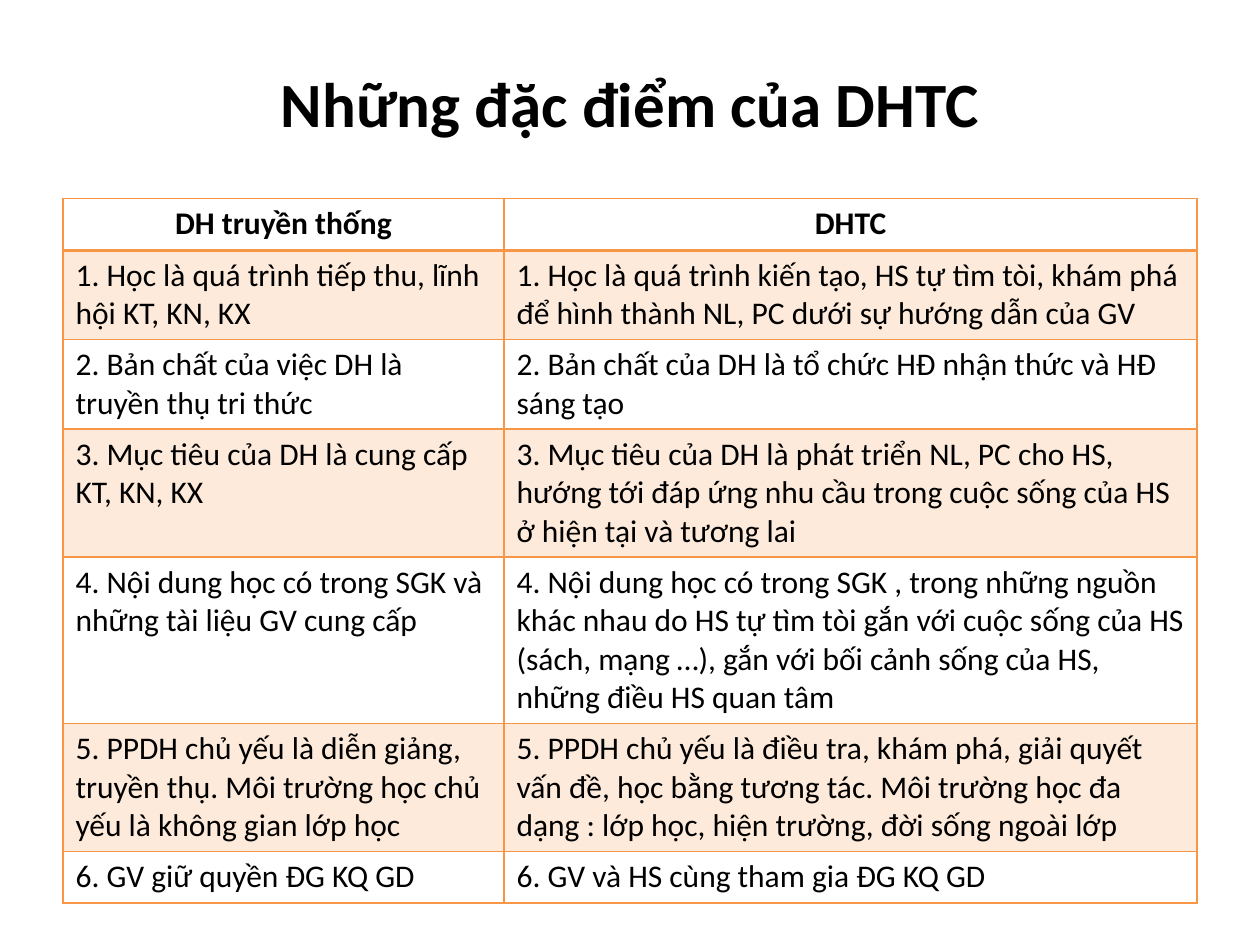
from dataclasses import dataclass

from lxml import etree
from pptx import Presentation
from pptx import util as u
from pptx.dml.color import RGBColor
from pptx.enum import text
from pptx.oxml.ns import qn

HUES = {"ink": "000000", "rule": "F79646"}
FONT = "Calibri"
WIDE, HIGH = u.Inches(10), u.Inches(7.5)
LEFT, SPAN = 0.05, 0.9
COLS = (0.35, 0.55)
ROW = u.Inches(0.41)


@dataclass
class Pair:
    old: str
    new: str
    head: bool = False
    tint: bool = False


PAIRS = [
    Pair("DH truyền thống", "DHTC", head=True),
    Pair("1. Học là quá trình tiếp thu, lĩnh hội KT, KN, KX",
         "1. Học là quá trình kiến tạo, HS tự tìm tòi, khám phá để hình thành NL, "
         "PC dưới sự hướng dẫn của GV", tint=True),
    Pair("2. Bản chất của việc DH là truyền thụ tri thức",
         "2. Bản chất của DH là tổ chức HĐ nhận thức và HĐ sáng tạo"),
    Pair("3. Mục tiêu của DH là cung cấp KT, KN, KX",
         "3. Mục tiêu của DH là phát triển NL, PC cho HS, hướng tới đáp ứng nhu cầu "
         "trong cuộc sống của HS ở hiện tại và tương lai", tint=True),
    Pair("4. Nội dung học có trong SGK và những tài liệu GV cung cấp",
         "4. Nội dung học có trong SGK , trong những nguồn khác nhau do HS tự tìm tòi "
         "gắn với cuộc sống của HS (sách, mạng …), gắn với bối cảnh sống của HS, "
         "những điều HS quan tâm"),
    Pair("5. PPDH chủ yếu là diễn giảng, truyền thụ. Môi trường học chủ yếu là "
         "không gian lớp học",
         "5. PPDH chủ yếu là điều tra, khám phá, giải quyết vấn đề, học bằng tương tác. "
         "Môi trường học đa dạng : lớp học, hiện trường, đời sống ngoài lớp", tint=True),
    Pair("6. GV giữ quyền ĐG KQ GD", "6. GV và HS cùng tham gia ĐG KQ GD"),
]


def style(frame, size: float, bold: bool, mid: bool) -> None:
    for para in frame.paragraphs:
        para.alignment = text.PP_ALIGN.CENTER if mid else text.PP_ALIGN.LEFT
        for run in para.runs:
            run.font.name = FONT
            run.font.size = u.Pt(size)
            run.font.bold = bold
            run.font.color.rgb = RGBColor.from_string(HUES["ink"])


def edge(cell, side: str, width: float) -> None:
    props = cell._tc.get_or_add_tcPr()
    line = etree.SubElement(props, qn(f"a:ln{side}"), w=str(u.Pt(width)))
    fill = etree.SubElement(line, qn("a:solidFill"))
    etree.SubElement(fill, qn("a:srgbClr"), val=HUES["rule"])


def paint(cell, tint: bool) -> None:
    if not tint:
        cell.fill.background()
        return
    cell.fill.solid()
    cell.fill.fore_color.rgb = RGBColor.from_string(HUES["rule"])
    hue = cell._tc.tcPr.find(f"{qn('a:solidFill')}/{qn('a:srgbClr')}")
    etree.SubElement(hue, qn("a:alpha"), val="20000")


def draw_pair(cells, pair: Pair, below: bool) -> None:
    for cell, words in zip(cells, (pair.old, pair.new)):
        cell.text_frame.text = words
        style(cell.text_frame, 18, pair.head, pair.head)
        for side in "LRTB":
            thick = (side == "B" and pair.head) or (side == "T" and below)
            edge(cell, side, 2 if thick else 1)
        paint(cell, pair.tint)


def draw_table(slide) -> None:
    frame = slide.shapes.add_table(
        len(PAIRS), len(COLS), int(WIDE * LEFT), int(HIGH * 0.21),
        int(WIDE * SPAN), ROW * len(PAIRS))
    table = frame.table
    table.horz_banding = False
    for col, share in zip(table.columns, COLS):
        col.width = int(WIDE * share)
    for i, (row, pair) in enumerate(zip(table.rows, PAIRS)):
        row.height = ROW
        draw_pair(row.cells, pair, i == 1)


def draw_title(slide) -> None:
    title = slide.shapes.title
    title.left, title.top = int(WIDE * LEFT), int(HIGH * 0.04)
    title.width, title.height = int(WIDE * SPAN), u.Inches(1.03)
    frame = title.text_frame
    frame.text = "Những đặc điểm của DHTC"
    frame.vertical_anchor = text.MSO_ANCHOR.MIDDLE
    style(frame, 36, True, True)


def main() -> None:
    deck = Presentation()
    deck.slide_width, deck.slide_height = WIDE, HIGH
    slide = deck.slides.add_slide(deck.slide_layouts[5])
    draw_title(slide)
    draw_table(slide)
    deck.save("out.pptx")


if __name__ == "__main__":
    main()
